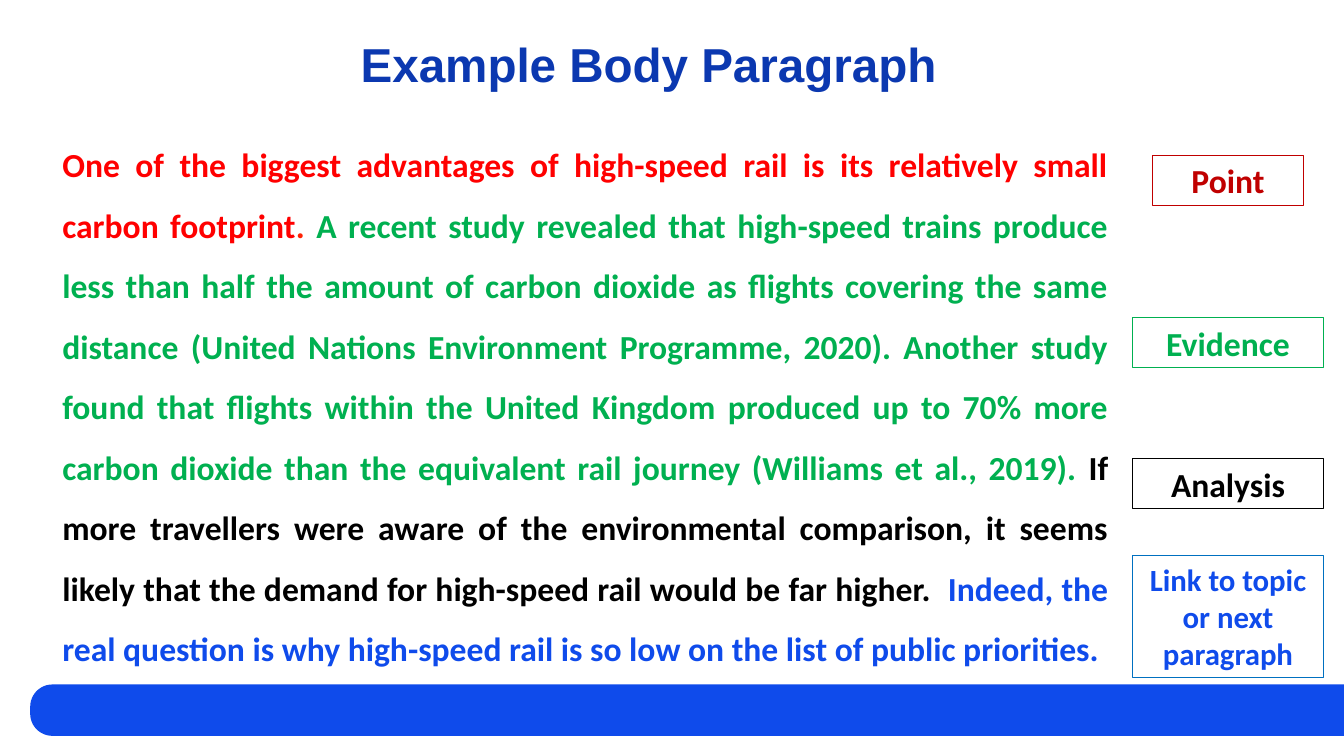
from pptx import Presentation
from pptx.dml.color import RGBColor
from pptx.enum.shapes import MSO_SHAPE
from pptx.enum.text import MSO_ANCHOR, PP_ALIGN
from pptx.util import Emu, Pt

PX = 9144  # 100 px to the inch
WHITE = RGBColor(0xFF, 0xFF, 0xFF)
BLACK = RGBColor(0, 0, 0)
NAVY = RGBColor(0x0B, 0x38, 0xB0)
BLUE = RGBColor(0x0F, 0x4B, 0xEB)
LINK_BORDER = RGBColor(0x00, 0x70, 0xC0)
RED = RGBColor(0xFF, 0x00, 0x00)
ORANGE_RED = RGBColor(0xFF, 0x23, 0x05)
DARK_RED = RGBColor(0xC0, 0x00, 0x00)
GREEN = RGBColor(0x00, 0xB0, 0x50)

ESSAY = [
    ("One of the biggest advantages of high-speed rail is its relatively "
     "small carbon footprint", RED),
    (". ", ORANGE_RED),
    ("A recent study revealed that high-speed trains produce less than half "
     "the amount of carbon dioxide as flights covering the same distance "
     "(United Nations Environment Programme, 2020). Another study found that "
     "flights within the United Kingdom produced up to 70% more carbon dioxide "
     "than the equivalent rail journey (Williams et al., 2019). ", GREEN),
    ("If more travellers were aware of the environmental comparison, it seems "
     "likely that the demand for high-speed rail would be far higher.  ", BLACK),
    ("Indeed, the real question is why high-speed rail is so low on the list "
     "of public priorities. ", BLUE),
]
# label, top, height, side indent, size, text colour, border colour
LABELS = [
    ("Point", 154, 50, 20, 24, DARK_RED, DARK_RED),
    ("Evidence", 315, 50, 0, 24, GREEN, GREEN),
    ("Analysis", 455, 50, 0, 24, BLACK, BLACK),
    ("Link to topic or next paragraph", 551, 121, 0, 22, BLUE, LINK_BORDER),
]


def px(*lengths):
    return [Emu(length * PX) for length in lengths]


def style(run, face, size, colour):
    run.font.name = face
    run.font.size = Pt(size)
    run.font.bold = True
    run.font.color.rgb = colour


def add_paragraph_box(slide, box, runs, face, size, align, spacing):
    frame = slide.shapes.add_textbox(*px(*box)).text_frame
    frame.word_wrap = True
    frame.vertical_anchor = MSO_ANCHOR.TOP
    paragraph = frame.paragraphs[0]
    paragraph.alignment = align
    paragraph.line_spacing = spacing
    for words, colour in runs:
        run = paragraph.add_run()
        run.text = words
        style(run, face, size, colour)


def add_footer_band(slide, left, top, width, height):
    """Draw a band whose left end is rounded: a round-topped shape on its side."""
    shift = (width - height) // 2
    band = slide.shapes.add_shape(
        MSO_SHAPE.ROUND_2_SAME_RECTANGLE,
        *px(left + shift, top - shift, height, width))
    band.rotation = 270
    band.adjustments[0] = 0.43
    band.adjustments[1] = 0
    band.shadow.inherit = False
    band.fill.solid()
    band.fill.fore_color.rgb = BLUE
    band.line.fill.background()


def add_labels(slide, left, width):
    for words, top, height, indent, size, colour, border in LABELS:
        label = slide.shapes.add_shape(
            MSO_SHAPE.RECTANGLE,
            *px(left + indent, top, width - 2 * indent, height))
        label.shadow.inherit = False
        label.fill.solid()
        label.fill.fore_color.rgb = WHITE
        label.line.color.rgb = border
        label.line.width = Pt(0.75)
        frame = label.text_frame
        frame.word_wrap = True
        frame.vertical_anchor = MSO_ANCHOR.TOP
        frame.text = words
        paragraph = frame.paragraphs[0]
        paragraph.alignment = PP_ALIGN.CENTER
        style(paragraph.runs[0], "Calibri", size, colour)


def main():
    deck = Presentation()
    deck.slide_width, deck.slide_height = px(1333, 750)
    slide = deck.slides.add_slide(deck.slide_layouts[6])
    add_footer_band(slide, 30, 679, 1303, 51)
    add_paragraph_box(slide, (52, 36, 1183, 100),
                      [("Example Body Paragraph", NAVY)],
                      "Arial", 34, PP_ALIGN.CENTER, 0.9)
    add_paragraph_box(slide, (52, 118, 1057, 542), ESSAY,
                      "Calibri", 24, PP_ALIGN.JUSTIFY, 1.5)
    add_labels(slide, 1123, 190)
    deck.save("out.pptx")


if __name__ == "__main__":
    main()
